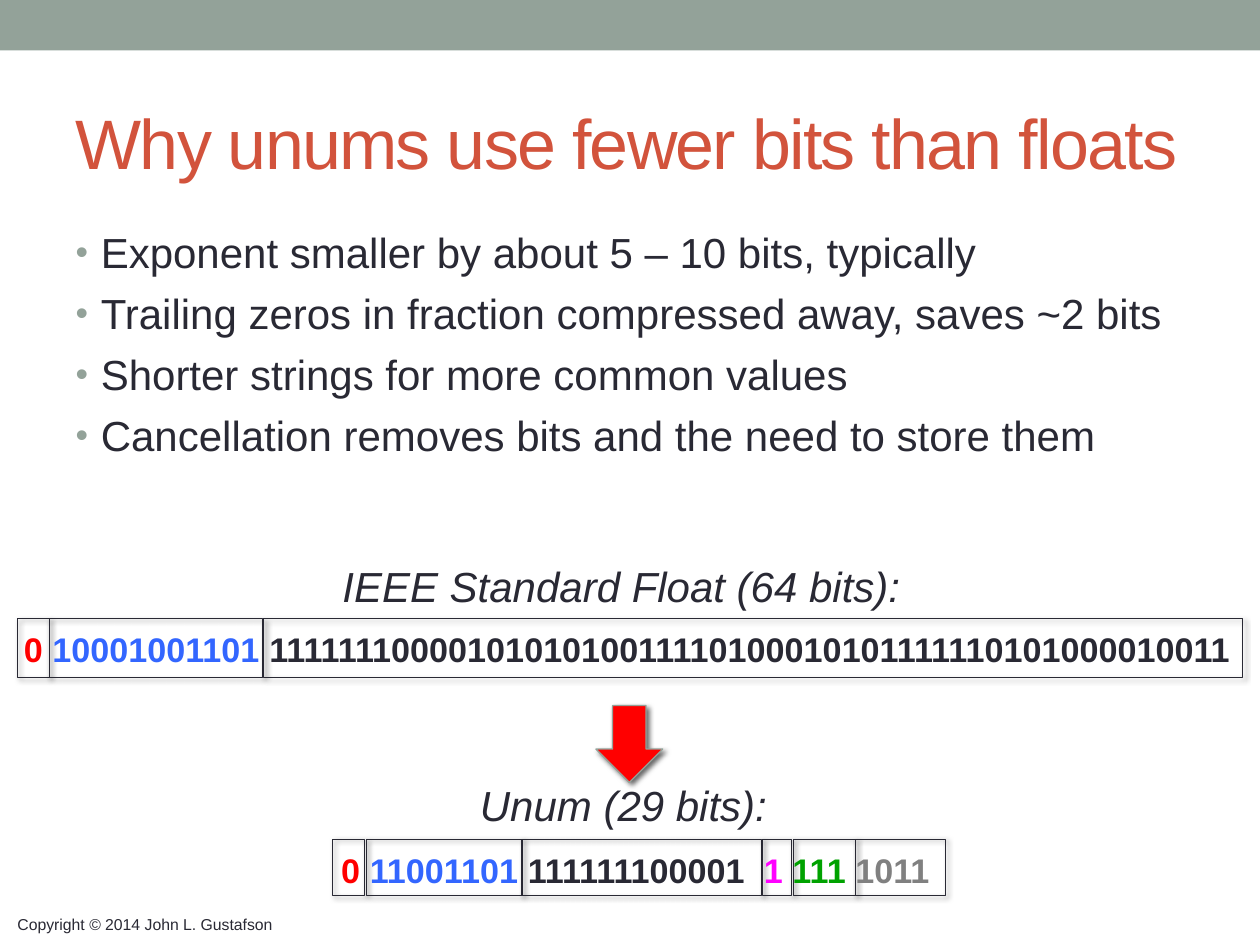
from dataclasses import dataclass

from lxml.etree import SubElement
from pptx import Presentation
from pptx.dml.color import RGBColor
from pptx.enum.shapes import MSO_SHAPE
from pptx.enum.text import MSO_ANCHOR, MSO_AUTO_SIZE, PP_ALIGN
from pptx.oxml.ns import qn
from pptx.util import Inches, Pt


@dataclass(frozen=True)
class Theme:
    font: str = "Arial"
    ink: str = "292934"
    sage: str = "93A299"
    title: str = "D2533C"
    sign: str = "FF0000"
    exponent: str = "3366FF"
    ubit: str = "FF00FF"
    exponent_size: str = "00A200"
    fraction_size: str = "808080"
    shadow: str = "000000"
    title_size: float = 40
    body_size: float = 24
    bits_size: float = 19.5
    footer_size: float = 9


THEME = Theme()

BULLETS = [
    "Exponent smaller by about 5\u00a0–\u00a010 bits, typically",
    "Trailing zeros in fraction compressed away, saves ~2 bits",
    "Shorter strings for more common values",
    "Cancellation removes bits and the need to store them",
]
FLOAT_BITS = [
    ("0 ", THEME.sign, 0),
    ("10001001101 ", THEME.exponent, 0),
    ("1111111000010101010011110100010101111110101000010011", THEME.ink, 0),
]
UNUM_BITS = [
    ("0 ", THEME.sign, 0),
    ("11001101 ", THEME.exponent, 0),
    ("111111100001", THEME.ink, 0),
    (" ", THEME.ink, 5.4),
    ("1 ", THEME.ubit, 0),
    ("111 ", THEME.exponent_size, 0),
    ("1011", THEME.fraction_size, 0),
]
FLOAT_FIELDS = [(0.14, 0.25), (0.39, 1.69), (2.09, 7.77)]
UNUM_FIELDS = [(2.64, 0.25), (2.91, 1.24), (4.14, 1.9),
               (6.05, 0.23), (6.3, 0.49), (6.79, 0.71)]


def color(value):
    return RGBColor.from_string(value)


def add_run(paragraph, text, size, ink=THEME.ink, bold=False, italic=False, spacing=0):
    run = paragraph.add_run()
    run.text = text
    font = run.font
    font.name, font.size = THEME.font, Pt(size)
    font.bold, font.italic = bold, italic
    font.color.rgb = color(ink)
    if spacing:
        run._r.get_or_add_rPr().set("spc", str(round(spacing * 100)))


def add_text(shapes, left, top, width, height, wrap=False):
    frame = shapes.add_textbox(*map(Inches, (left, top, width, height))).text_frame
    frame.word_wrap = wrap
    return frame.paragraphs[0]


def place(shape, left, top, width, height):
    shape.left, shape.top = Inches(left), Inches(top)
    shape.width, shape.height = Inches(width), Inches(height)


def add_shadow(shape):
    shape.shadow.inherit = False
    effects = shape._element.spPr.find(qn("a:effectLst"))
    shadow = SubElement(effects, qn("a:outerShdw"), blurRad=str(Pt(3)),
                        dist=str(Pt(2)), dir="2700000", rotWithShape="0")
    tint = SubElement(shadow, qn("a:srgbClr"), val=THEME.shadow)
    SubElement(tint, qn("a:alpha"), val="60000")


def add_shape(shapes, kind, bounds, fill=None, line=None, line_width=0.5, shadow=True):
    shape = shapes.add_shape(kind, *map(Inches, bounds))
    if fill:
        shape.fill.solid()
        shape.fill.fore_color.rgb = color(fill)
    else:
        shape.fill.background()
    if line:
        shape.line.color.rgb = color(line)
        shape.line.width = Pt(line_width)
    else:
        shape.line.fill.background()
    if shadow:
        add_shadow(shape)
    else:
        shape.shadow.inherit = False


def add_fields(slide, fields, top, height):
    group = slide.shapes.add_group_shape()
    for left, width in fields:
        add_shape(group.shapes, MSO_SHAPE.RECTANGLE, (left, top, width, height), line=THEME.ink)


def add_bits(slide, bits, left, top, width):
    paragraph = add_text(slide.shapes, left, top, width, 0.43, wrap=True)
    for text, ink, spacing in bits:
        add_run(paragraph, text, THEME.bits_size, ink, bold=True, spacing=spacing)


def add_caption(slide, text, left, top, width):
    paragraph = add_text(slide.shapes, left, top, width, 0.5)
    add_run(paragraph, text, THEME.body_size, italic=True)


def fill_title(title, text):
    place(title, 0.5, 0.58, 9, 1.08)
    frame = title.text_frame
    frame.auto_size = MSO_AUTO_SIZE.NONE
    frame.vertical_anchor = MSO_ANCHOR.MIDDLE
    paragraph = frame.paragraphs[0]
    paragraph.alignment = PP_ALIGN.LEFT
    add_run(paragraph, text, THEME.title_size, THEME.title, spacing=-1)


def format_bullet(paragraph):
    paragraph.space_before = Pt(6)
    properties = paragraph._p.get_or_add_pPr()
    properties.set("marL", str(Inches(0.2)))
    properties.set("indent", str(Inches(-0.2)))
    bullet_color = SubElement(properties, qn("a:buClr"))
    SubElement(bullet_color, qn("a:srgbClr"), val=THEME.sage)
    SubElement(properties, qn("a:buSzPct"), val="85000")
    SubElement(properties, qn("a:buFont"), typeface=THEME.font)
    SubElement(properties, qn("a:buChar"), char="•")


def fill_body(body, items):
    place(body, 0.5, 1.75, 9, 5.33)
    frame = body.text_frame
    frame.auto_size = MSO_AUTO_SIZE.NONE
    for index, item in enumerate(items):
        paragraph = frame.add_paragraph() if index else frame.paragraphs[0]
        format_bullet(paragraph)
        add_run(paragraph, item, THEME.body_size)


def main():
    presentation = Presentation()
    presentation.slide_width, presentation.slide_height = Inches(10), Inches(7.5)
    slide = presentation.slides.add_slide(presentation.slide_layouts[1])
    shapes = slide.shapes

    add_shape(shapes, MSO_SHAPE.RECTANGLE, (0, 0, 10, 0.4), fill=THEME.sage, shadow=False)
    footer = add_text(shapes, 0.04, 7.21, 2.25, 0.25)
    add_run(footer, "Copyright © 2014 John L. Gustafson", THEME.footer_size)
    fill_title(shapes.title, "Why unums use fewer bits than floats")
    fill_body(slide.placeholders[1], BULLETS)

    add_caption(slide, "Unum (29 bits):", 3.71, 6.14, 2.59)
    add_caption(slide, "IEEE Standard Float (64 bits):", 2.62, 4.4, 4.76)
    add_fields(slide, FLOAT_FIELDS, 4.91, 0.47)
    add_shape(shapes, MSO_SHAPE.DOWN_ARROW, (4.73, 5.6, 0.53, 0.61),
              fill=THEME.sign, line=THEME.sage, line_width=0.75)
    add_bits(slide, FLOAT_BITS, 0.09, 4.94, 9.91)
    add_fields(slide, UNUM_FIELDS, 6.66, 0.45)
    add_bits(slide, UNUM_BITS, 2.61, 6.69, 4.92)

    presentation.save("out.pptx")


if __name__ == "__main__":
    main()
